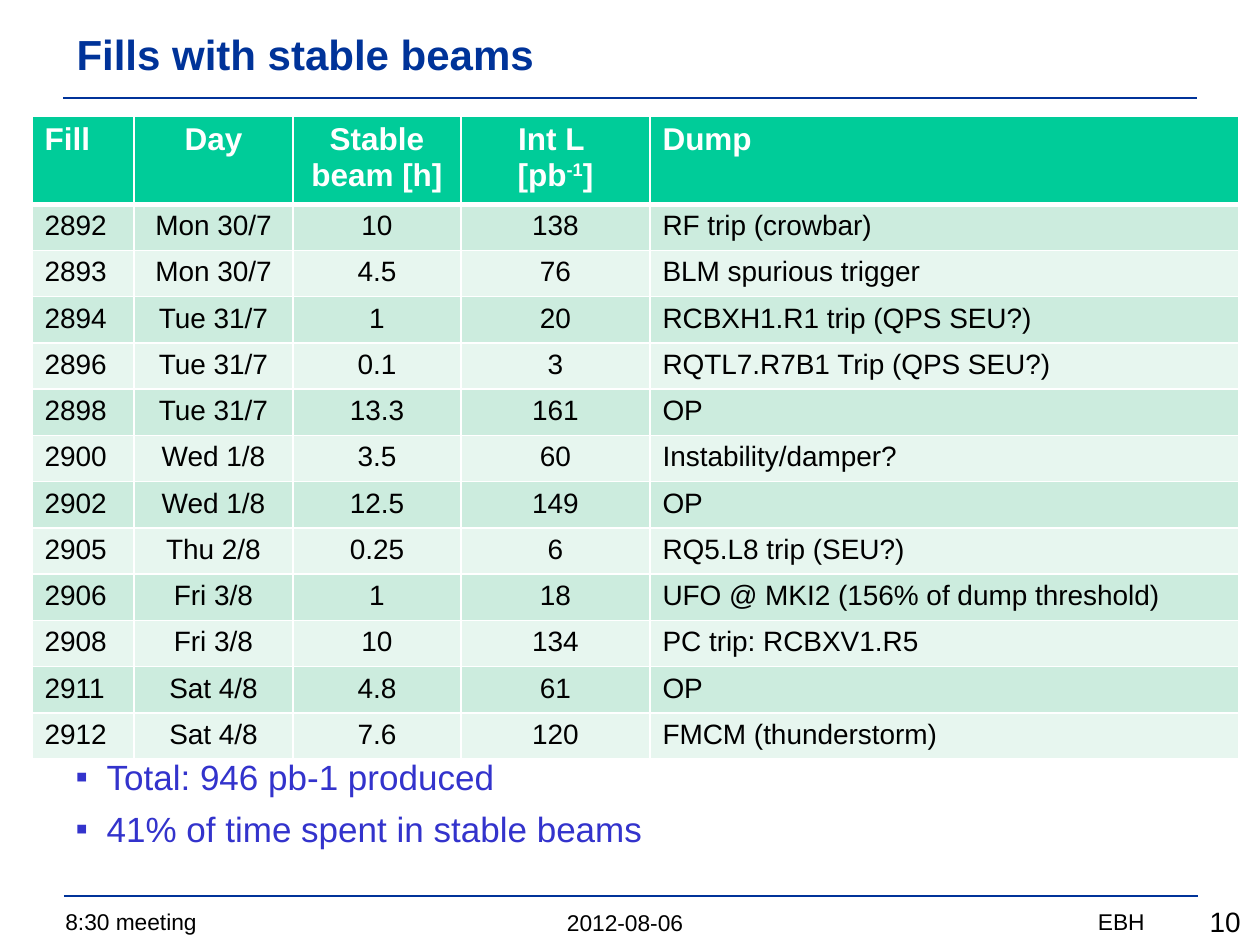
from lxml import etree
from pptx import Presentation
from pptx.dml.color import RGBColor
from pptx.enum.shapes import MSO_CONNECTOR
from pptx.enum.text import MSO_ANCHOR, PP_ALIGN
from pptx.oxml import parse_xml
from pptx.oxml.ns import nsdecls, qn
from pptx.util import Pt

LEFT, CENTER, RIGHT = PP_ALIGN.LEFT, PP_ALIGN.CENTER, PP_ALIGN.RIGHT
MIDDLE, TOP = MSO_ANCHOR.MIDDLE, MSO_ANCHOR.TOP
STRAIGHT = MSO_CONNECTOR.STRAIGHT

NAVY = RGBColor(0x00, 0x33, 0x99)
BLUE = RGBColor(0x33, 0x33, 0xCC)
BLACK = RGBColor(0x00, 0x00, 0x00)
WHITE = RGBColor(0xFF, 0xFF, 0xFF)
GREEN = RGBColor(0x00, 0xCC, 0x99)
BANDS = [RGBColor(0xCC, 0xEC, 0xDE), RGBColor(0xE7, 0xF6, 0xEF)]

PX = 914400 / 126


def px(*values):
    return [round(v * PX) for v in values]


def add_run(p, text, size, color, bold=False):
    r = p.add_run()
    r.text = text
    r.font.name = "Arial"
    r.font.size = Pt(size)
    r.font.bold = bold
    r.font.color.rgb = color
    return r


prs = Presentation()
prs.slide_width, prs.slide_height = px(1260, 945)
s = prs.slides.add_slide(prs.slide_layouts[1])

# Title
title = s.shapes.title
title.left, title.top, title.width, title.height = px(64, 11, 1133, 86)
title.text_frame.vertical_anchor = MIDDLE
p = title.text_frame.paragraphs[0]
p.alignment = LEFT
add_run(p, "Fills with stable beams", 24, NAVY, True)

# Summary bullets
body = s.placeholders[1]
body.left, body.top, body.width, body.height = px(63, 749, 1134, 136)
tf = body.text_frame
tf.vertical_anchor = TOP
for i, text in enumerate(["Total: 946 pb-1 produced",
                          "41% of time spent in stable beams"]):
    p = tf.paragraphs[0] if i == 0 else tf.add_paragraph()
    p.space_before, p.space_after = Pt(0), Pt(6)
    pPr = p._p.get_or_add_pPr()
    indent = px(31)[0]
    pPr.set("marL", str(indent))
    pPr.set("indent", str(-indent))
    etree.SubElement(pPr, qn("a:buFont")).set("typeface", "Arial")
    etree.SubElement(pPr, qn("a:buChar")).set("char", "▪")
    add_run(p, text, 20, BLUE)

# Rules under the title and above the footer
for x, y in [(63, 98), (64, 896)]:
    rule = s.shapes.add_connector(STRAIGHT, *px(x, y, x + 1134, y))
    rule.line.color.rgb = NAVY
    rule.line.width = Pt(1.5)
    etree.SubElement(rule._element.spPr, qn("a:effectLst"))

# Footer texts
for text, box, align, size in [
    ("2012-08-06", (305, 903, 640, 40), CENTER, 13),
    ("8:30 meeting", (53, 902, 466, 40), LEFT, 13),
    ("EBH", (789, 902, 368, 40), RIGHT, 13),
    ("10", (1108, 898, 145, 46), RIGHT, 16),
]:
    tf = s.shapes.add_textbox(*px(*box)).text_frame
    tf.word_wrap = True
    p = tf.paragraphs[0]
    p.alignment = align
    add_run(p, text, size, BLACK)

# Table of fills
HEADER = ["Fill", "Day", "Stable beam [h]", "Int L \n[pb^-1^]", "Dump"]
FILLS = [
    ("2892", "Mon 30/7", "10", "138", "RF trip (crowbar)"),
    ("2893", "Mon 30/7", "4.5", "76", "BLM spurious trigger"),
    ("2894", "Tue 31/7", "1", "20", "RCBXH1.R1 trip (QPS SEU?)"),
    ("2896", "Tue 31/7", "0.1", "3", "RQTL7.R7B1 Trip (QPS SEU?)"),
    ("2898", "Tue 31/7", "13.3", "161", "OP"),
    ("2900", "Wed 1/8", "3.5", "60", "Instability/damper?"),
    ("2902", "Wed 1/8", "12.5", "149", "OP"),
    ("2905", "Thu 2/8", "0.25", "6", "RQ5.L8 trip (SEU?)"),
    ("2906", "Fri 3/8", "1", "18", "UFO @ MKI2 (156% of dump threshold)"),
    ("2908", "Fri 3/8", "10", "134", "PC trip: RCBXV1.R5"),
    ("2911", "Sat 4/8", "4.8", "61", "OP"),
    ("2912", "Sat 4/8", "7.6", "120", "FMCM (thunderstorm)"),
]
ALIGNS = [LEFT, CENTER, CENTER, CENTER, LEFT]
rows = [HEADER, *FILLS]
frame = s.shapes.add_table(len(rows), len(HEADER), *px(32, 116, 1207, 470))
table = frame.table
for column, width in zip(table.columns, px(102, 159, 168, 189, 589)):
    column.width = width

for i, row in enumerate(rows):
    head = i == 0
    table.rows[i].height = px(50 if head else 35)[0]
    size, color = (18, WHITE) if head else (16, BLACK)
    for j, text in enumerate(row):
        cell = table.cell(i, j)
        tf = cell.text_frame
        for k, line in enumerate(text.split("\n")):
            p = tf.paragraphs[0] if k == 0 else tf.add_paragraph()
            p.alignment = ALIGNS[j]
            # Odd parts between carets are superscripts
            for n, part in enumerate(line.split("^")):
                r = add_run(p, part, size, color, head)
                if n % 2:
                    r.font._element.set("baseline", "30000")
        # White borders, thick under the header
        tcPr = cell._tc.get_or_add_tcPr()
        for side in "LRTB":
            thick = (head and side == "B") or (i == 1 and side == "T")
            tcPr.append(parse_xml(
                f'<a:ln{side} {nsdecls("a")} w="{Pt(3 if thick else 1)}">'
                f'<a:solidFill><a:srgbClr val="{WHITE}"/></a:solidFill>'
                f'</a:ln{side}>'))
        cell.fill.solid()
        cell.fill.fore_color.rgb = GREEN if head else BANDS[(i - 1) % 2]

prs.save("out.pptx")
